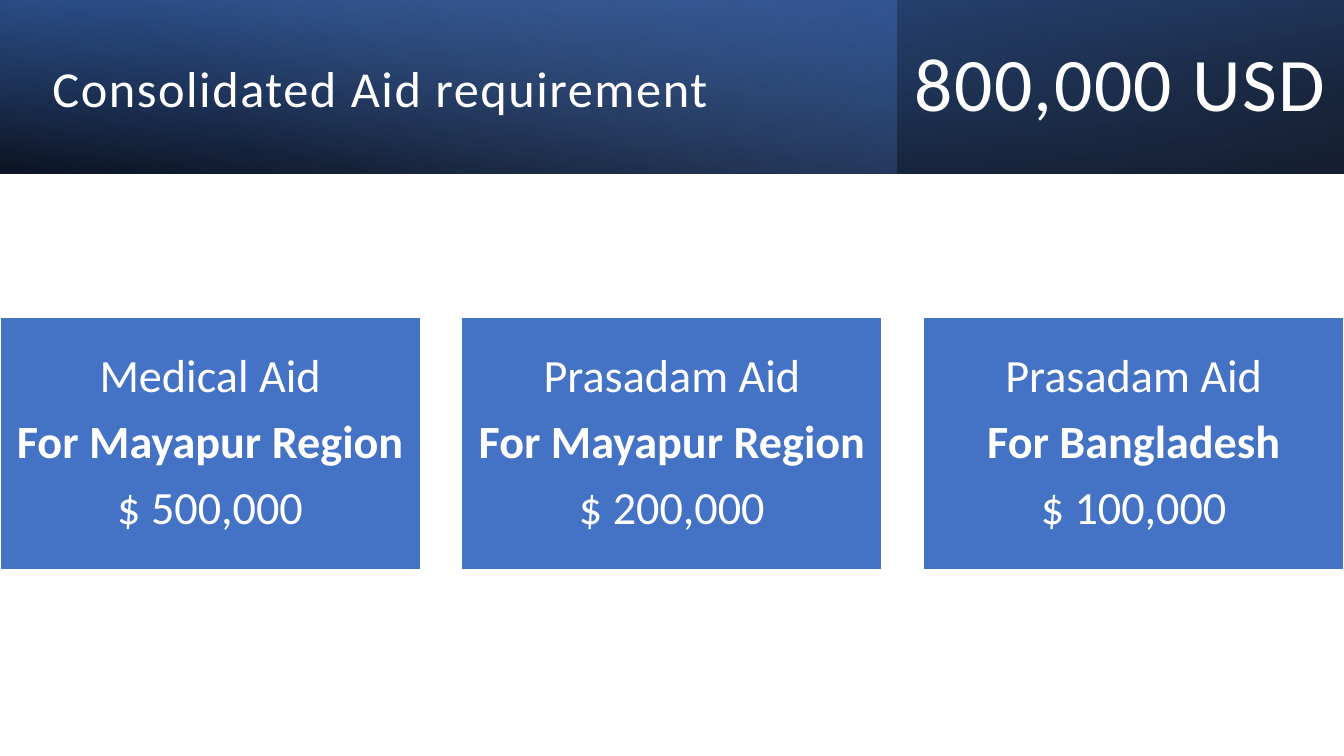
from lxml.etree import SubElement
from pptx import Presentation
from pptx.dml.color import RGBColor
from pptx.enum.shapes import MSO_SHAPE
from pptx.enum.text import MSO_ANCHOR, MSO_AUTO_SIZE, PP_ALIGN
from pptx.oxml.ns import qn
from pptx.util import Inches, Pt

COLORS = {
    "white": "FFFFFF",
    "black": "000000",
    "navy": "2F5597",
    "blue": "4472C4",
    "pale": "8FAADC",
}
FONT = "Calibri"
SLIDE_WIDTH, SLIDE_HEIGHT = 13.33, 7.5
BAND_HEIGHT = 1.72
AMOUNT_LEFT = 8.89
CARD_WIDTH, CARD_HEIGHT, CARD_TOP = 4.17, 2.5, 3.15
CARDS = [
    ("Medical Aid", "For Mayapur Region", "$ 500,000"),
    ("Prasadam Aid", "For Mayapur Region", "$ 200,000"),
    ("Prasadam Aid", "For Bangladesh", "$ 100,000"),
]


def color(name):
    return RGBColor.from_string(COLORS[name])


def write_text(para, text, size, bold=False, align=PP_ALIGN.LEFT, tracking=0, after=0):
    """Put one formatted span of white text in a paragraph."""
    para.alignment = align
    para.line_spacing = 0.9
    para.space_before, para.space_after = Pt(0), Pt(after)
    span = para.add_run()
    span.text = text
    span.font.name = FONT
    span.font.size = Pt(size)
    span.font.bold = bold
    span.font.color.rgb = color("white")
    if tracking:
        span.font._element.set("spc", str(round(tracking * 100)))


def prepare_frame(frame, inset=None):
    """Wrap the text, centre it vertically and set equal insets."""
    frame.word_wrap = True
    frame.auto_size = MSO_AUTO_SIZE.NONE
    frame.vertical_anchor = MSO_ANCHOR.MIDDLE
    if inset is not None:
        frame.margin_left = frame.margin_right = Inches(inset)
        frame.margin_top = frame.margin_bottom = Inches(inset)


def add_rectangle(page, left, top, width, height):
    box = page.shapes.add_shape(
        MSO_SHAPE.RECTANGLE, Inches(left), Inches(top), Inches(width), Inches(height))
    box.shadow.inherit = False
    return box


def add_gradient_band(page, width, stops, angle, rotation=0, flip=False):
    """Add a header band; each stop is (position %, colour, opacity %)."""
    band = add_rectangle(page, 0, 0, width, BAND_HEIGHT)
    band.line.fill.background()
    band.rotation = rotation
    if flip:
        band._element.spPr.find(qn("a:xfrm")).set("flipH", "1")
    band.fill.gradient()
    gradient = band._element.spPr.find(qn("a:gradFill"))
    for child in list(gradient):
        gradient.remove(child)
    gradient.set("rotWithShape", "1")
    stop_list = SubElement(gradient, qn("a:gsLst"))
    for position, name, opacity in stops:
        stop = SubElement(stop_list, qn("a:gs"), pos=str(position * 1000))
        fill = SubElement(stop, qn("a:srgbClr"), val=COLORS[name])
        SubElement(fill, qn("a:alpha"), val=str(opacity * 1000))
    SubElement(gradient, qn("a:lin"), ang=str(angle * 60000), scaled="0")


def add_title(page, text):
    title = page.shapes.title
    title.left, title.top = Inches(0.42), Inches(0.27)
    title.width, title.height = Inches(8.56), Inches(1.27)
    prepare_frame(title.text_frame)
    write_text(title.text_frame.paragraphs[0], text, size=36, tracking=1.1)
    # Bring the title in front of the bands
    page.shapes._spTree.append(title._element)


def add_amount(page, text):
    box = page.shapes.add_textbox(
        Inches(AMOUNT_LEFT), 0, Inches(SLIDE_WIDTH - AMOUNT_LEFT), Inches(BAND_HEIGHT))
    prepare_frame(box.text_frame)
    write_text(box.text_frame.paragraphs[0], text, size=54,
               align=PP_ALIGN.CENTER, tracking=1.1)


def add_card(page, left, lines):
    card = add_rectangle(page, left, CARD_TOP, CARD_WIDTH, CARD_HEIGHT)
    card.fill.solid()
    card.fill.fore_color.rgb = color("blue")
    card.line.color.rgb = color("white")
    card.line.width = Pt(1)
    frame = card.text_frame
    prepare_frame(frame, inset=0.14)
    for index, line in enumerate(lines):
        para = frame.add_paragraph() if index else frame.paragraphs[0]
        write_text(para, line, size=33, bold=index == 1,
                   align=PP_ALIGN.CENTER, after=11.5)


def main():
    deck = Presentation()
    deck.slide_width, deck.slide_height = Inches(SLIDE_WIDTH), Inches(SLIDE_HEIGHT)
    page = deck.slides.add_slide(deck.slide_layouts[5])

    # Layered header bands
    add_gradient_band(page, SLIDE_WIDTH, [(0, "black", 96), (100, "navy", 100)],
                      angle=100, rotation=180, flip=True)
    add_gradient_band(page, AMOUNT_LEFT, [(0, "blue", 41), (74, "pale", 0)], angle=140)
    add_gradient_band(page, SLIDE_WIDTH, [(0, "black", 63), (78, "blue", 15)],
                      angle=260, flip=True)

    # Header text
    add_title(page, "Consolidated Aid requirement")
    add_amount(page, "800,000 USD")

    # Aid cards, spread evenly over the slide width
    step = (SLIDE_WIDTH - CARD_WIDTH) / (len(CARDS) - 1)
    for index, lines in enumerate(CARDS):
        add_card(page, index * step, lines)

    deck.save("out.pptx")


if __name__ == "__main__":
    main()
